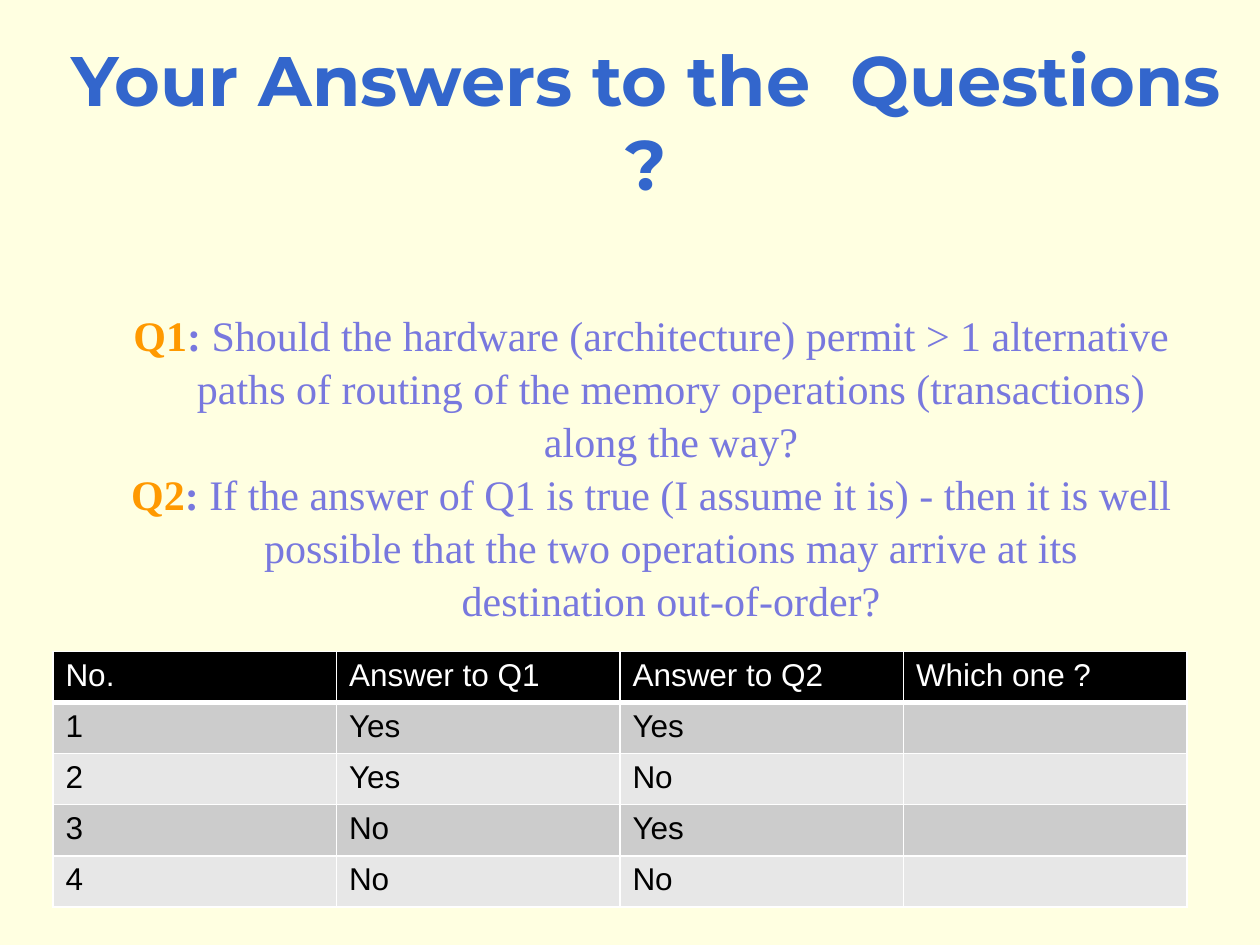
"""Build the slide of the two routing questions and the table of possible answers."""
from collections import namedtuple

from lxml.etree import SubElement
from pptx import Presentation
from pptx.dml.color import RGBColor as RGB
from pptx.enum.text import MSO_ANCHOR as Anchor, PP_ALIGN as Align
from pptx.oxml.ns import qn
from pptx.util import Pt

Theme = namedtuple("Theme", "page title label question header odd even white black "
                            "title_size question_size table_size")
theme = Theme(*map(RGB.from_string, ("FFFFE1", "3366CC", "FF9900", "7878DE", "000000",
                                     "CCCCCC", "E7E7E7", "FFFFFF", "000000")), 40, 24, 18)


def style(font, name, size, color, bold=False):
    font.name, font.size, font.bold = name, Pt(size), bold
    font.color.rgb = color


def add_border(cell, side, width):
    line = SubElement(cell._tc.get_or_add_tcPr(), qn(f"a:ln{side}"), w=str(Pt(width)))
    SubElement(SubElement(line, qn("a:solidFill")), qn("a:srgbClr"), val=str(theme.white))


presentation = Presentation()
presentation.slide_width, presentation.slide_height = Pt(720), Pt(540)
slide = presentation.slides.add_slide(presentation.slide_layouts[6])
slide.background.fill.solid()
slide.background.fill.fore_color.rgb = theme.page

left, content_width = 30.24, 648

title = slide.shapes.add_textbox(Pt(left), Pt(23.76), Pt(678.24), Pt(90)).text_frame
title.word_wrap = True
title.vertical_anchor = Anchor.MIDDLE
heading = title.paragraphs[0]
heading.text = "Your Answers to the  Questions ?"
heading.alignment = Align.CENTER
style(heading.font, "Montserrat", theme.title_size, theme.title, True)

questions = [
    ("Q1", " Should the hardware (architecture) permit > 1 alternative paths of routing "
           "of the memory operations (transactions) along the way?"),
    ("Q2", " If the answer of Q1 is true (I assume it is) - then it is well possible that "
           "the two operations may arrive at its destination out-of-order?"),
]
question_box = slide.shapes.add_textbox(
    Pt(left), Pt(172.08), Pt(content_width), Pt(181.44)).text_frame
question_box.word_wrap = True
for index, (label, wording) in enumerate(questions):
    question = question_box.add_paragraph() if index else question_box.paragraphs[0]
    question.alignment = Align.CENTER
    question.line_spacing = 1.05
    indents = question._p.get_or_add_pPr()
    indents.set("marL", str(Pt(58.5)))
    indents.set("indent", str(Pt(-22.5)))
    for text, color, bold in ((label, theme.label, True), (":", theme.question, True),
                              (wording, theme.question, False)):
        part = question.add_run()
        part.text = text
        style(part.font, "Times New Roman", theme.question_size, color, bold)

answers = [
    ("No.", "Answer to Q1", "Answer to Q2", "Which one ?"),
    ("1", "Yes", "Yes", ""),
    ("2", "Yes", "No", ""),
    ("3", "No", "Yes", ""),
    ("4", "No", "No", ""),
]
row_height = 29.2
answer_table = slide.shapes.add_table(
    len(answers), len(answers[0]), Pt(left), Pt(372.24), Pt(content_width),
    Pt(row_height * len(answers))).table
for row_index, row in enumerate(answers):
    answer_table.rows[row_index].height = Pt(row_height)
    is_header = row_index == 0
    fill = theme.header if is_header else theme.odd if row_index % 2 else theme.even
    for column_index, text in enumerate(row):
        cell = answer_table.cell(row_index, column_index)
        cell.text = text
        style(cell.text_frame.paragraphs[0].font, "Arial", theme.table_size,
              theme.white if is_header else theme.black)
        for side in "LRTB":
            add_border(cell, side, 3 if is_header and side == "B" else 1)
        cell.fill.solid()
        cell.fill.fore_color.rgb = fill

presentation.save("out.pptx")
